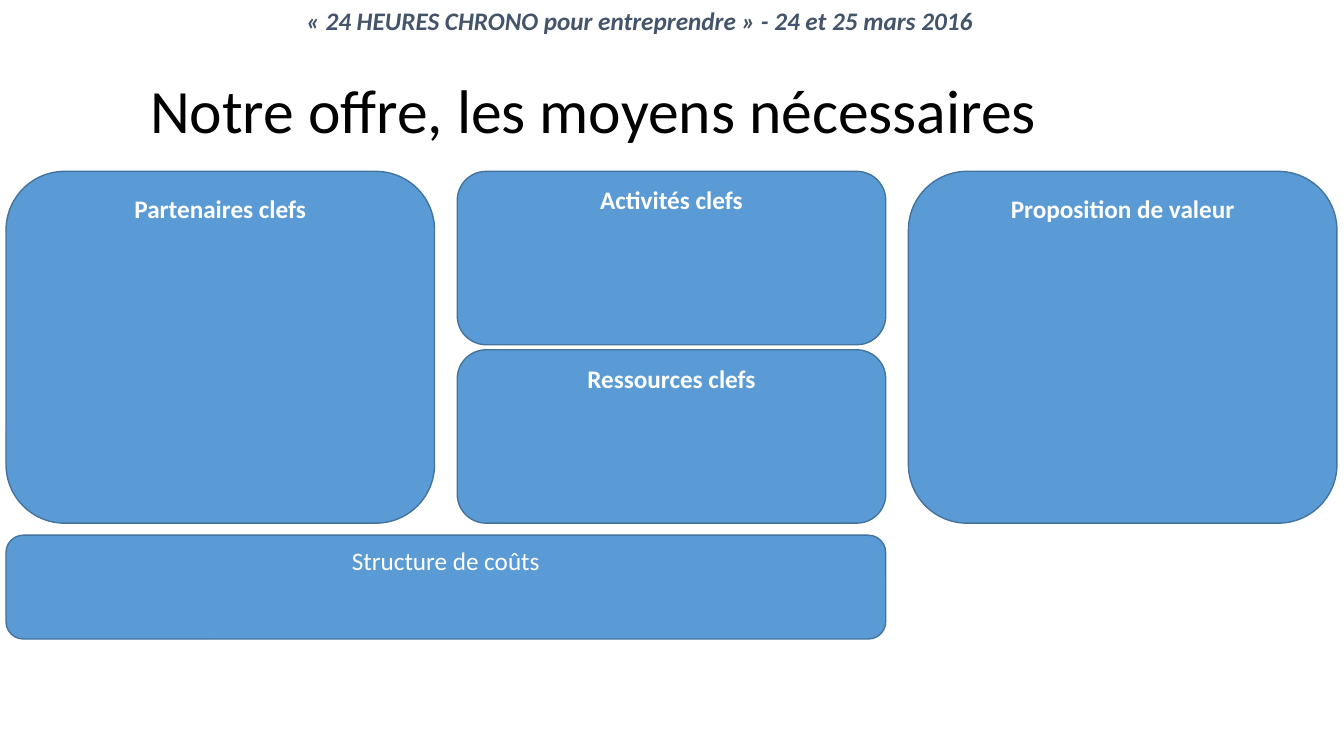
from pptx import Presentation
from pptx import util as u
from pptx.dml.color import RGBColor
from pptx.enum import shapes, text

BLUE = RGBColor(0x5B, 0x9B, 0xD5)
EDGE = RGBColor(0x43, 0x73, 0x9E)
SLATE = RGBColor(0x44, 0x54, 0x6A)
BLACK = RGBColor(0, 0, 0)
WHITE = RGBColor(0xFF, 0xFF, 0xFF)

LEFT, TOP = 0.06, 1.7
CARD_W, CARD_H = 4.25, 1.72
COL_GAP, ROW_GAP, COST_GAP = 0.225, 0.05, 0.12
COST_H = 1.03


def write(p, words, color, **font):
    p.text = words
    p.font.color.rgb = color
    for name, value in {"name": "Calibri", "size": u.Pt(18), **font}.items():
        setattr(p.font, name, value)


def add_label(slide, box, words, color, wrap=True, spacing=None, **font):
    tf = slide.shapes.add_textbox(*map(u.Inches, box)).text_frame
    tf.word_wrap = wrap
    tf.vertical_anchor = text.MSO_ANCHOR.MIDDLE
    p = tf.paragraphs[0]
    p.line_spacing = spacing
    write(p, words, color, **font)


def add_card(slide, box, words, bold=True):
    sp = slide.shapes.add_shape(
        shapes.MSO_SHAPE.ROUNDED_RECTANGLE, *map(u.Inches, box))
    sp.shadow.inherit = False
    sp.fill.solid()
    sp.fill.fore_color.rgb = BLUE
    sp.line.color.rgb = EDGE
    sp.line.width = u.Pt(1)
    tf = sp.text_frame
    tf.word_wrap = True
    tf.vertical_anchor = text.MSO_ANCHOR.TOP
    p = tf.paragraphs[0]
    p.alignment = text.PP_ALIGN.CENTER
    write(p, words, WHITE, bold=bold)


def add_header(slide):
    add_label(slide, (2.94, 0, 6.9, 0.4),
              "«\u00a024 HEURES CHRONO\u00a0pour entreprendre » - 24 et 25 mars 2016",
              SLATE, wrap=False, bold=True, italic=True)
    add_label(slide, (1.39, 0.4, 11.03, 1.45),
              "Notre offre, les moyens nécessaires",
              BLACK, spacing=0.9, size=u.Pt(44))


def add_canvas(slide, left, top):
    """Three columns of cards, with the costs under the first two."""
    columns = [
        ["Partenaires clefs"],
        ["Activités clefs", "Ressources clefs"],
        ["Proposition de valeur"],
    ]
    full_h = 2 * CARD_H + ROW_GAP
    for col, names in enumerate(columns):
        x = left + col * (CARD_W + COL_GAP)
        height = CARD_H if len(names) > 1 else full_h
        for row, name in enumerate(names):
            y = top + row * (CARD_H + ROW_GAP)
            add_card(slide, (x, y, CARD_W, height), name)
    add_card(slide, (left, top + full_h + COST_GAP,
                     2 * CARD_W + COL_GAP, COST_H),
             "Structure de coûts", bold=False)


def main():
    prs = Presentation()
    prs.slide_width, prs.slide_height = u.Inches(13.33), u.Inches(7.5)
    slide = prs.slides.add_slide(prs.slide_layouts[6])
    add_header(slide)
    add_canvas(slide, LEFT, TOP)
    prs.save("out.pptx")


if __name__ == "__main__":
    main()
